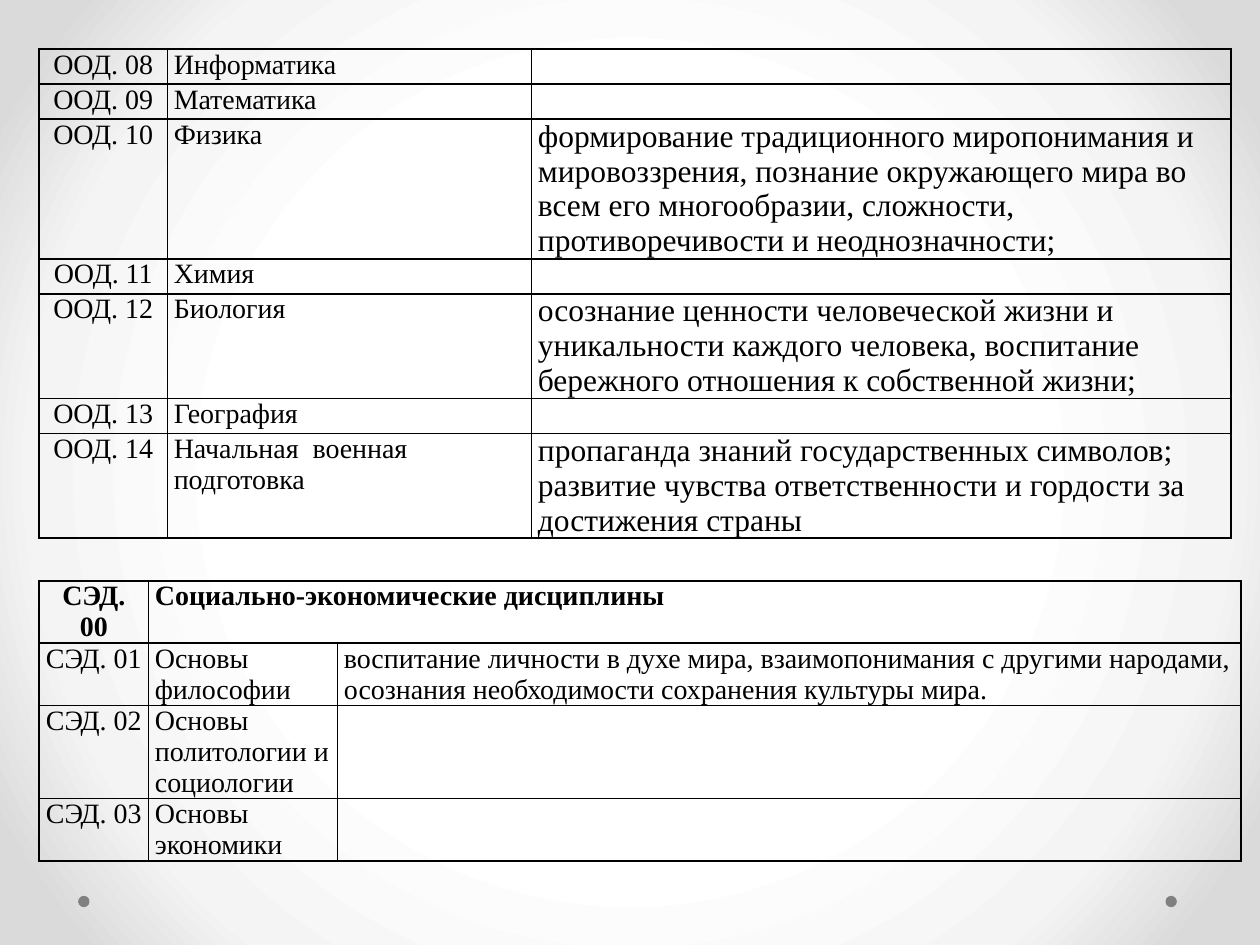
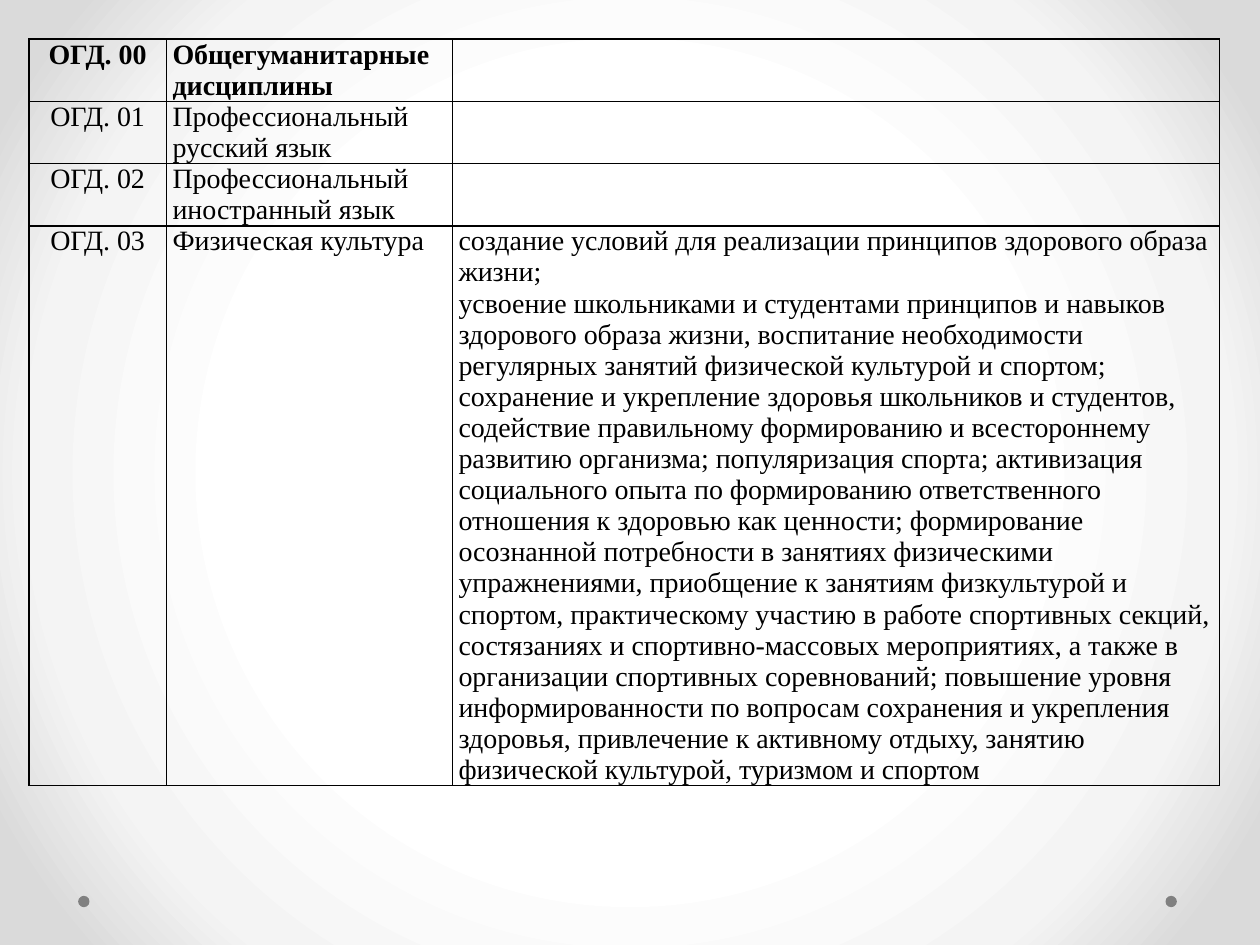
from copy import deepcopy

from pptx import Presentation
from pptx import util as u
from pptx.dml.color import RGBColor
from pptx.enum import shapes, text
from pptx.oxml import parse_xml
from pptx.oxml.ns import nsdecls, qn

FONT = "Times New Roman"
BLACK, GRAY = "000000", "808080"
BACKDROP = [(50, "FFFFFF"), (76, "F4F4F4"), (92, "DADADA")]
DOT_SIZE, DOT_TOP, DOT_LEFTS = 0.09, 7.11, (0.62, 9.25)

SPORT_GOALS = [
    "создание условий для реализации принципов здорового образа жизни;",
    "усвоение школьниками и студентами принципов и навыков здорового "
    "образа жизни, воспитание необходимости регулярных занятий "
    "физической культурой и спортом; сохранение и укрепление здоровья "
    "школьников и студентов, содействие правильному формированию и "
    "всестороннему развитию организма; популяризация спорта; "
    "активизация социального опыта по формированию ответственного "
    "отношения к здоровью как ценности; формирование осознанной "
    "потребности в занятиях физическими упражнениями, приобщение к "
    "занятиям физкультурой и спортом, практическому участию в работе "
    "спортивных секций,",
    "состязаниях и спортивно-массовых мероприятиях, а также в "
    "организации спортивных соревнований; повышение уровня "
    "информированности по вопросам сохранения и укрепления здоровья, "
    "привлечение к активному отдыху, занятию физической культурой, "
    "туризмом и спортом",
]
GENERAL = {
    "place": (0.31, 0.39),
    "columns": (1.02, 2.89, 5.55),
    "heights": (0.24, 0.24, 1.11, 0.24, 0.83, 0.24, 0.83),
    "detail_size": 18,
    "rows": [
        ("ООД. 08", "Информатика", ""),
        ("ООД. 09", "Математика", ""),
        ("ООД. 10", "Физика",
         "формирование традиционного миропонимания и мировоззрения, познание "
         "окружающего мира во всем его многообразии, сложности, "
         "противоречивости и неоднозначности;"),
        ("ООД. 11", "Химия", ""),
        ("ООД. 12", "Биология",
         "осознание ценности человеческой жизни и уникальности каждого "
         "человека, воспитание бережного отношения к собственной жизни;"),
        ("ООД. 13", "География", ""),
        ("ООД. 14", "Начальная  военная подготовка",
         "пропаганда знаний государственных символов;\n"
         "развитие чувства ответственности и гордости за достижения страны"),
    ],
}
SOCIAL = {
    "place": (0.31, 4.61),
    "columns": (0.87, 1.5, 7.17),
    "heights": (0.49, 0.49, 0.74, 0.49),
    "detail_size": 16,
    "rows": [
        ("СЭД. 00", "Социально-экономические дисциплины"),
        ("СЭД. 01", "Основы философии",
         "воспитание личности в духе мира, взаимопонимания с другими "
         "народами, осознания необходимости сохранения культуры мира."),
        ("СЭД. 02", "Основы политологии и социологии", ""),
        ("СЭД. 03", "Основы экономики", ""),
    ],
}
HUMANITIES = {
    "place": (0.23, 0.31),
    "columns": (1.09, 2.27, 6.09),
    "heights": (0.49, 0.49, 0.49, 4.44),
    "detail_size": 16,
    "rows": [
        ("ОГД. 00", "Общегуманитарные дисциплины", ""),
        ("ОГД. 01", "Профессиональный русский язык", ""),
        ("ОГД. 02", "Профессиональный иностранный язык", ""),
        ("ОГД. 03", "Физическая культура", "\n".join(SPORT_GOALS)),
    ],
}
PAGES = [[GENERAL, SOCIAL], [HUMANITIES]]


def color(value):
    return RGBColor.from_string(value)


def write(cell, words, size=16, bold=False, align=text.PP_ALIGN.LEFT):
    cell.margin_left = cell.margin_right = u.Inches(0.05)
    cell.margin_top = cell.margin_bottom = 0
    para = cell.text_frame.paragraphs[0]
    para.alignment = align
    if not words:
        para._p.append(parse_xml(f'<a:endParaRPr {nsdecls("a")} sz="{size * 100}">'
                                 f'<a:latin typeface="{FONT}"/></a:endParaRPr>'))
        return
    para.text = words
    for span in para.runs:
        span.font.name = FONT
        span.font.size = u.Pt(size)
        span.font.bold = bold
        span.font.color.rgb = color(BLACK)
    for line_break in para._p.findall(qn("a:br")):
        line_break.append(deepcopy(para.runs[0]._r.rPr))


def outline(cell):
    properties = cell._tc.get_or_add_tcPr()
    for side in "LRTB":
        properties.append(parse_xml(
            f'<a:ln{side} {nsdecls("a")} w="12700"><a:solidFill>'
            f'<a:srgbClr val="{BLACK}"/></a:solidFill></a:ln{side}>'))
    cell.fill.background()


def add_disciplines(page, group):
    rows, columns, heights = group["rows"], group["columns"], group["heights"]
    left, top = group["place"]
    frame = page.shapes.add_table(
        len(rows), len(columns), u.Inches(left), u.Inches(top),
        u.Inches(sum(columns)), u.Inches(sum(heights)))
    table = frame.table
    table.first_row = table.horz_banding = False
    for column, width in zip(table.columns, columns):
        column.width = u.Inches(width)
    for row, height in zip(table.rows, heights):
        row.height = u.Inches(height)
        for cell in row.cells:
            outline(cell)
    for index, (code, name, *detail) in enumerate(rows):
        heading = code.endswith("00")
        write(table.cell(index, 0), code, bold=heading, align=text.PP_ALIGN.CENTER)
        write(table.cell(index, 1), name, bold=heading)
        write(table.cell(index, 2), "".join(detail), size=group["detail_size"])
        if not detail:
            table.cell(index, 1).merge(table.cell(index, 2))


def set_backdrop(master):
    stops = "".join(f'<a:gs pos="{position * 1000}"><a:srgbClr val="{value}"/></a:gs>'
                    for position, value in BACKDROP)
    content = master.element.cSld
    for old in content.findall(qn("p:bg")):
        content.remove(old)
    content.insert(0, parse_xml(
        f'<p:bg {nsdecls("p", "a")}><p:bgPr><a:gradFill rotWithShape="1">'
        f'<a:gsLst>{stops}</a:gsLst><a:path path="circle">'
        '<a:fillToRect l="50000" t="50000" r="50000" b="50000"/></a:path>'
        '</a:gradFill><a:effectLst/></p:bgPr></p:bg>'))


def add_dots(master, page):
    for left in DOT_LEFTS:
        dot = page.shapes.add_shape(
            shapes.MSO_SHAPE.OVAL, u.Inches(left), u.Inches(DOT_TOP),
            u.Inches(DOT_SIZE), u.Inches(DOT_SIZE))
        dot.shadow.inherit = False
        dot.fill.solid()
        dot.fill.fore_color.rgb = color(GRAY)
        dot.line.fill.background()
        master.shapes._spTree.append(dot._element)


def main():
    deck = Presentation()
    deck.slide_width, deck.slide_height = u.Inches(10), u.Inches(7.5)
    set_backdrop(deck.slide_master)
    for groups in PAGES:
        page = deck.slides.add_slide(deck.slide_layouts[6])
        for group in groups:
            add_disciplines(page, group)
    add_dots(deck.slide_master, deck.slides[0])
    deck.save("out.pptx")


if __name__ == "__main__":
    main()
